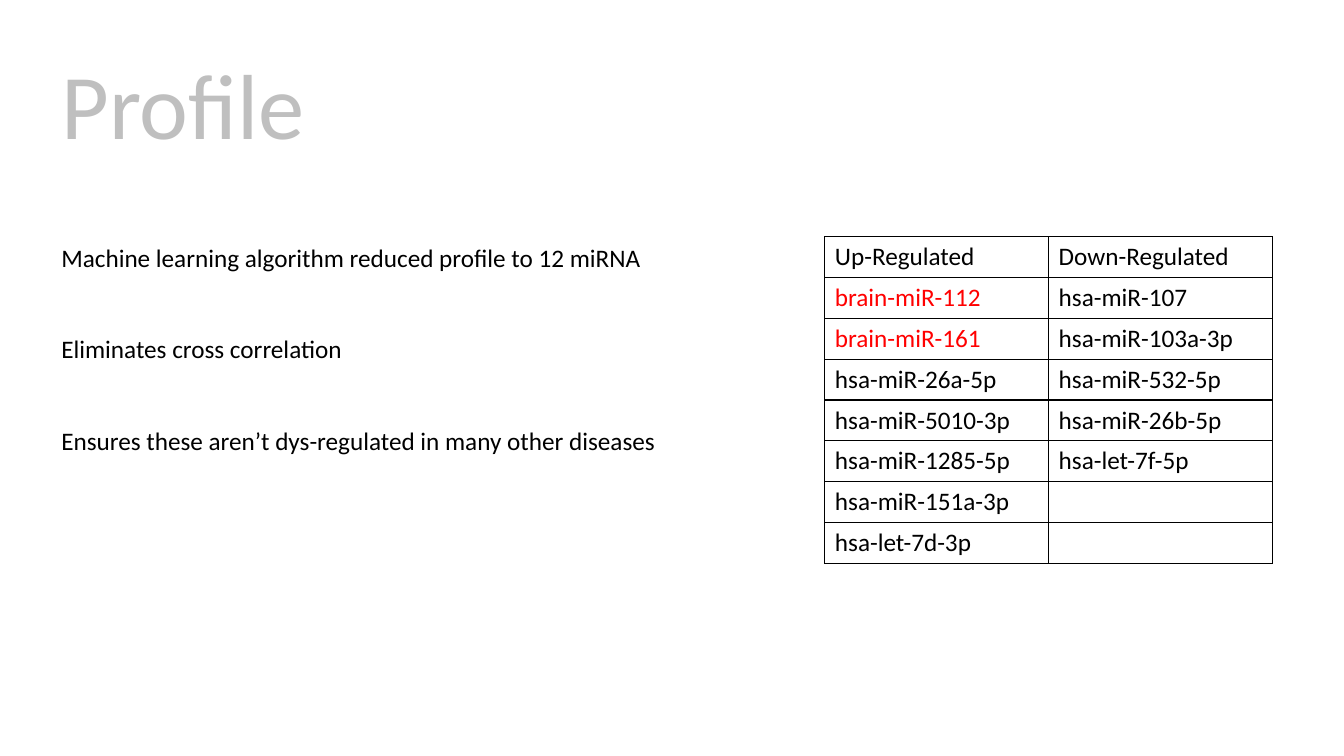
from pptx import Presentation
from pptx.dml.color import RGBColor as RGB
from pptx.enum.text import MSO_ANCHOR as ANCHOR, MSO_AUTO_SIZE as FIT
from pptx.oxml import parse_xml
from pptx.oxml.ns import nsdecls
from pptx.util import Inches, Pt

COLORS = {"title": "BFBFBF", "text": "000000", "brain": "FF0000", "line": "000000"}
FORMATS = {
    "title": {"name": "Calibri", "size": Pt(66)},
    "body": {"name": "Calibri", "size": Pt(18)},
}
COLS, ROWS = 40, 30
LEFT, TOP = 1.53, 9.4

POINTS = [
    "Machine learning algorithm reduced profile to 12 miRNA",
    "Eliminates cross correlation",
    "Ensures these aren’t dys-regulated in many other diseases",
]
PROFILE = [
    ("Up-Regulated", "Down-Regulated"),
    ("brain-miR-112", "hsa-miR-107"),
    ("brain-miR-161", "hsa-miR-103a-3p"),
    ("hsa-miR-26a-5p", "hsa-miR-532-5p"),
    ("hsa-miR-5010-3p", "hsa-miR-26b-5p"),
    ("hsa-miR-1285-5p", "hsa-let-7f-5p"),
    ("hsa-miR-151a-3p", ""),
    ("hsa-let-7d-3p", ""),
]


class Deck:
    def __init__(self):
        self.prs = Presentation()
        self.prs.slide_width, self.prs.slide_height = Inches(13.33), Inches(7.5)
        self.slide = self.prs.slides.add_slide(self.prs.slide_layouts[6])

    def box(self, x, y, w, h):
        col, row = self.prs.slide_width / COLS, self.prs.slide_height / ROWS
        return int(x * col), int(y * row), int(w * col), int(h * row)

    def line(self, p, text, style, color):
        font = p.font
        if text:
            r = p.add_run()
            r.text = text
            font = r.font
        for key, value in FORMATS[style].items():
            setattr(font, key, value)
        font.color.rgb = RGB.from_string(COLORS[color])

    def text(self, place, lines, style, color, frame, para):
        tf = self.slide.shapes.add_textbox(*self.box(*place)).text_frame
        for key, value in frame.items():
            setattr(tf, key, value)
        for i, line in enumerate(lines):
            p = tf.add_paragraph() if i else tf.paragraphs[0]
            for key, value in para.items():
                setattr(p, key, value)
            self.line(p, line, style, color)

    def border(self, cell):
        tcPr = cell._tc.get_or_add_tcPr()
        for side in "LRTB":
            tcPr.append(parse_xml(
                f'<a:ln{side} {nsdecls("a")} w="{Pt(1)}"><a:solidFill>'
                f'<a:srgbClr val="{COLORS["line"]}"/></a:solidFill></a:ln{side}>'))

    def table(self, place, rows):
        sp = self.slide.shapes.add_table(len(rows), len(rows[0]), *self.box(*place))
        table = sp.table
        table.first_row = table.horz_banding = False
        for i, row in enumerate(rows):
            for j, text in enumerate(row):
                cell = table.cell(i, j)
                self.border(cell)
                cell.fill.background()
                color = "brain" if text.startswith("brain") else "text"
                self.line(cell.text_frame.paragraphs[0], text, "body", color)


def main():
    deck = Deck()
    deck.text((LEFT, 1.44, 34.5, 5.8), ["Profile"], "title", "title",
              {"word_wrap": True, "vertical_anchor": ANCHOR.MIDDLE},
              {"line_spacing": 0.9})
    deck.table((24.55, TOP, 13.32, 12.96), PROFILE)
    deck.text((LEFT, TOP, 18.48, 8.88), POINTS, "body", "text",
              {"word_wrap": False, "auto_size": FIT.SHAPE_TO_FIT_TEXT},
              {"space_after": Pt(44)})
    deck.prs.save("out.pptx")


if __name__ == "__main__":
    main()
